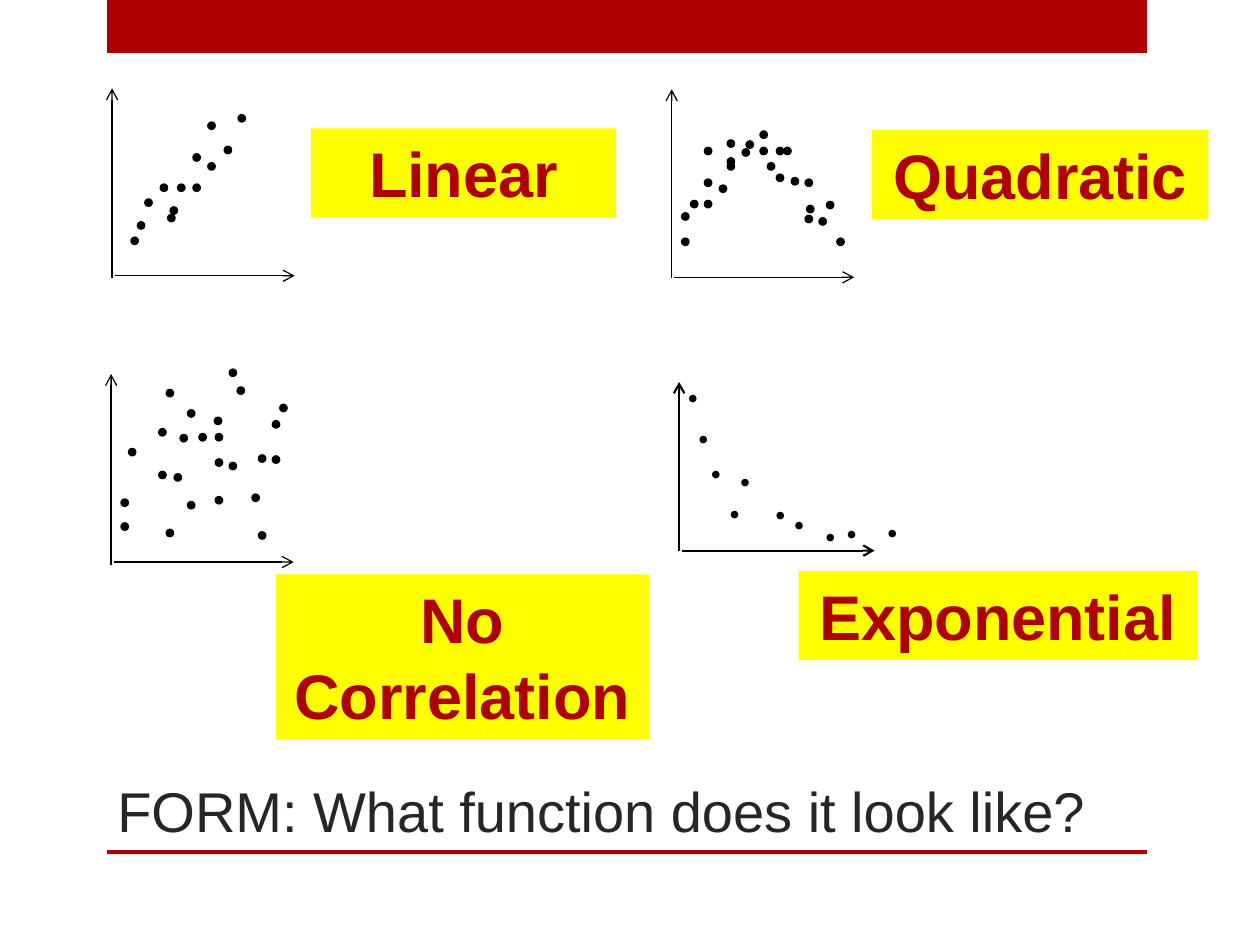
from lxml.etree import SubElement
from pptx import Presentation
from pptx.dml.color import RGBColor
from pptx.enum.shapes import MSO_CONNECTOR, MSO_SHAPE
from pptx.enum.text import MSO_ANCHOR, MSO_AUTO_SIZE, PP_ALIGN
from pptx.oxml.ns import qn
from pptx.util import Cm, Pt

RED = RGBColor(0xAD, 0x01, 0x01)
YELLOW = RGBColor(0xFF, 0xFF, 0x00)
BLACK = RGBColor(0x00, 0x00, 0x00)
CHARCOAL = RGBColor(0x26, 0x26, 0x26)

DOT_SIZE = 0.15
BULLET_WIDTH, BULLET_HEIGHT = 0.81, 1.02

LINEAR_DOTS = [
    (2.64, 4.78), (3.38, 4.32), (2.77, 4.47), (4.19, 2.46), (3.58, 3.71),
    (3.23, 3.71), (3.43, 4.17), (3.89, 3.10), (4.52, 2.95), (4.19, 3.28),
    (2.92, 4.01), (4.80, 2.31), (3.89, 3.71),
]
QUADRATIC_DOTS = [
    (13.92, 4.04), (16.23, 4.34), (14.20, 3.61), (15.65, 2.97), (15.04, 2.84),
    (14.50, 3.73), (14.66, 3.28), (15.32, 2.97), (15.80, 2.97), (15.47, 3.28),
    (14.20, 4.04), (16.23, 3.61), (16.66, 4.06), (16.51, 4.39), (14.96, 3.00),
    (15.32, 2.64), (15.65, 3.51), (16.26, 4.14), (16.87, 4.80), (13.74, 4.29),
    (14.66, 2.82), (14.66, 3.18), (15.95, 3.58), (14.20, 2.97), (13.74, 4.80),
]
SCATTERED_DOTS = [
    (2.59, 9.04), (5.64, 8.15), (3.35, 7.85), (4.34, 8.74), (3.35, 10.67),
    (3.20, 9.50), (3.51, 9.55), (4.01, 8.74), (3.78, 8.26), (3.20, 8.64),
    (3.78, 10.11), (5.08, 9.96), (5.49, 8.48), (5.49, 9.19), (3.63, 8.76),
    (5.21, 9.17), (4.34, 9.25), (4.32, 8.41), (4.78, 7.80), (2.44, 10.06),
    (4.62, 7.44), (4.34, 10.01), (4.62, 9.32), (5.21, 10.72), (2.44, 10.54),
]
EXPONENTIAL_BULLETS = [
    (13.61, 7.49), (13.82, 8.33), (14.07, 9.02), (14.66, 9.19), (14.45, 9.83),
    (15.37, 9.86), (15.75, 10.06), (16.81, 10.24), (17.63, 10.21), (16.38, 10.29),
]


class SlideBuilder:
    """Holds the slide and the style of its plots, labels and title."""

    def __init__(self, slide, font="Arial", bullet_font="Times New Roman"):
        self.slide = slide
        self.font = font
        self.bullet_font = bullet_font

    def block(self, shapes, kind, bounds, color):
        block = shapes.add_shape(kind, *map(Cm, bounds))
        block.shadow.inherit = False
        block.fill.solid()
        block.fill.fore_color.rgb = color
        block.line.fill.background()
        return block

    def bar(self, bounds):
        self.block(self.slide.shapes, MSO_SHAPE.RECTANGLE, bounds, RED)

    def style(self, paragraph, name, size, color, alignment, bold=False):
        paragraph.alignment = alignment
        paragraph.font.name = name
        paragraph.font.size = Pt(size)
        paragraph.font.bold = bold
        paragraph.font.color.rgb = color

    def title(self, text, bounds):
        title = self.slide.shapes.title
        title.left, title.top, title.width, title.height = map(Cm, bounds)
        frame = title.text_frame
        frame.text = text
        frame.auto_size = MSO_AUTO_SIZE.NONE
        frame.vertical_anchor = MSO_ANCHOR.BOTTOM
        self.style(frame.paragraphs[0], self.font, 32, CHARCOAL, PP_ALIGN.LEFT)

    def label(self, text, bounds):
        label = self.block(self.slide.shapes, MSO_SHAPE.RECTANGLE, bounds, YELLOW)
        frame = label.text_frame
        frame.text = text
        frame.word_wrap = True
        frame.auto_size = MSO_AUTO_SIZE.SHAPE_TO_FIT_TEXT
        frame.vertical_anchor = MSO_ANCHOR.TOP
        self.style(frame.paragraphs[0], self.font, 36, RED, PP_ALIGN.CENTER, True)

    def arrow(self, shapes, ends, width):
        arrow = shapes.add_connector(MSO_CONNECTOR.STRAIGHT, *map(Cm, ends))
        arrow.line.color.rgb = BLACK
        arrow.line.width = Pt(width)
        SubElement(arrow.line._get_or_add_ln(), qn("a:tailEnd"), type="arrow")
        SubElement(arrow._element.spPr, qn("a:effectLst"))

    def dot(self, shapes, left, top):
        bounds = (left, top, DOT_SIZE, DOT_SIZE)
        dot = self.block(shapes, MSO_SHAPE.OVAL, bounds, BLACK)
        dot.line.color.rgb = BLACK
        dot.line.width = Pt(0.75)

    def bullet(self, shapes, left, top):
        bounds = (left, top, BULLET_WIDTH, BULLET_HEIGHT)
        frame = shapes.add_textbox(*map(Cm, bounds)).text_frame
        frame.text = "•"
        frame.word_wrap = False
        frame.auto_size = MSO_AUTO_SIZE.SHAPE_TO_FIT_TEXT
        self.style(frame.paragraphs[0], self.bullet_font, 18, BLACK, PP_ALIGN.LEFT)

    def plot(self, vertical, horizontal, points, marker, width=0.75):
        shapes = self.slide.shapes.add_group_shape().shapes
        self.arrow(shapes, vertical, width)
        self.arrow(shapes, horizontal, width)
        for left, top in points:
            marker(shapes, left, top)


def main():
    deck = Presentation()
    deck.slide_width, deck.slide_height = Cm(25.4), Cm(19.05)
    page = SlideBuilder(deck.slides.add_slide(deck.slide_layouts[5]))

    page.bar((2.16, 0, 20.96, 1.07))
    page.bar((2.16, 17.14, 20.96, 0.08))
    page.plot((2.26, 5.61, 2.26, 1.78), (2.31, 5.56, 5.94, 5.56),
              LINEAR_DOTS, page.dot)
    page.plot((13.54, 5.61, 13.54, 1.80), (13.59, 5.59, 17.22, 5.59),
              QUADRATIC_DOTS, page.dot)
    page.plot((2.24, 11.38, 2.24, 7.54), (2.29, 11.33, 5.92, 11.33),
              SCATTERED_DOTS, page.dot)
    page.title("FORM: What function does it look like?", (2.11, 12.7, 21.16, 4.44))
    page.label("Quadratic", (17.58, 2.62, 6.78, 1.8))
    page.label("Linear", (6.27, 2.59, 6.15, 1.8))
    page.label("No Correlation", (5.56, 11.58, 7.52, 3.33))
    page.plot((13.69, 11.1, 13.69, 7.7), (13.74, 11.1, 17.63, 11.1),
              EXPONENTIAL_BULLETS, page.bullet, 1.25)
    page.label("Exponential", (16.1, 11.51, 8.03, 1.8))
    deck.save("out.pptx")


if __name__ == "__main__":
    main()
